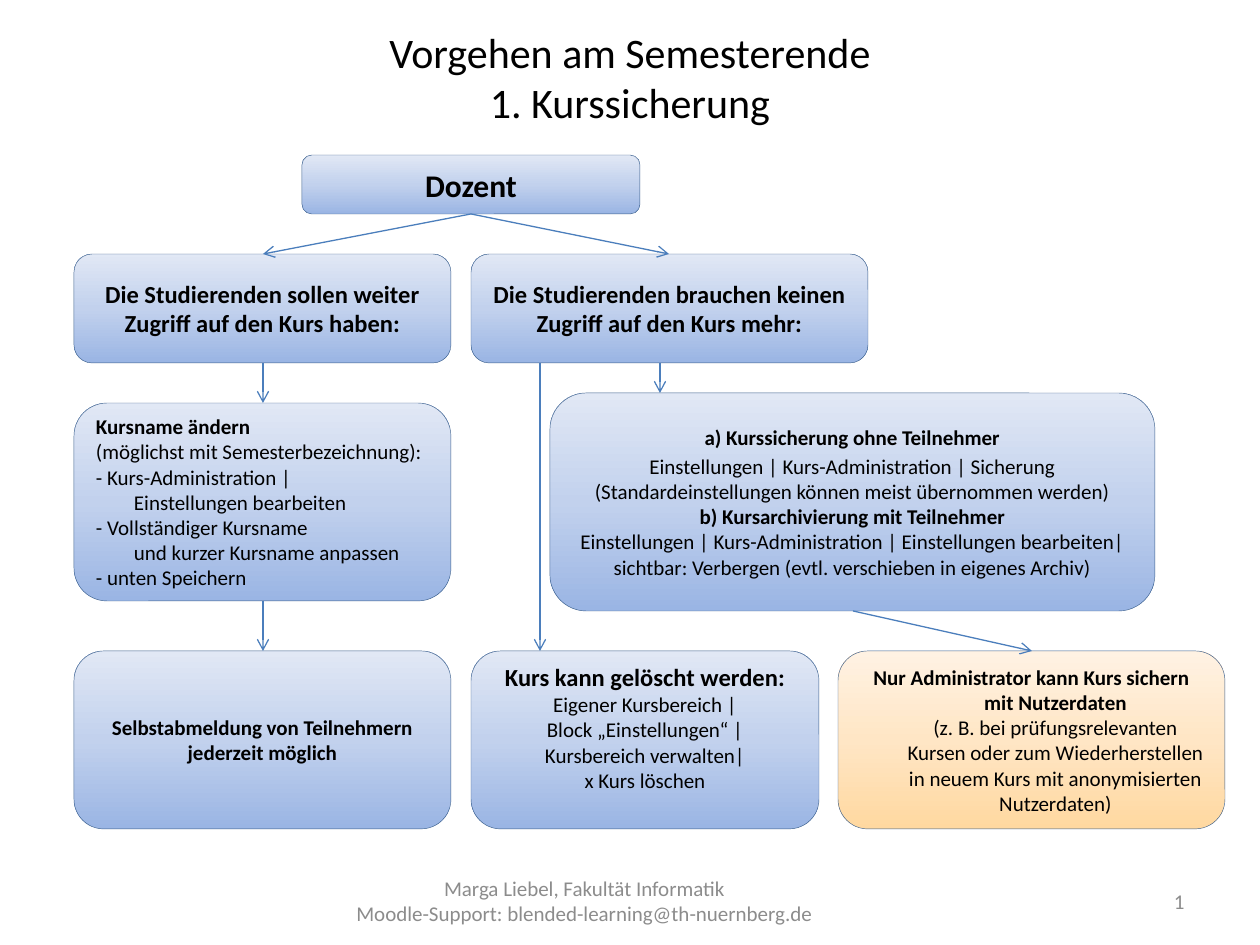
from copy import deepcopy
from lxml.etree import SubElement
from pptx import Presentation
from pptx.dml.color import RGBColor
from pptx.enum.shapes import MSO_CONNECTOR as Connector, MSO_SHAPE as Preset
from pptx.enum.text import MSO_ANCHOR as Anchor, MSO_AUTO_SIZE as AutoSize, PP_ALIGN as Align
from pptx.oxml.ns import qn
from pptx.util import Emu, Pt

hex_color = RGBColor.from_string


def px(value):
    return Emu(round(value * 914400 / 126))


def write(frame, lines, align, color="000000"):
    frame_format = {"word_wrap": True, "auto_size": AutoSize.NONE,
                    "vertical_anchor": Anchor.MIDDLE}
    for key, value in frame_format.items():
        setattr(frame, key, value)
    for index, (text, size, bold, left, first, before) in enumerate(lines):
        line = frame.add_paragraph() if index else frame.paragraphs[0]
        properties = line._p.get_or_add_pPr()
        properties.set("marL", str(px(left)))
        properties.set("indent", str(px(first)))
        SubElement(properties, qn("a:buNone"))
        line.alignment = align
        line.space_before = Pt(before)
        run = line.add_run()
        run.text = text
        font_format = {"name": "Calibri", "size": Pt(size), "bold": bold}
        for key, value in font_format.items():
            setattr(run.font, key, value)
        run.font.color.rgb = hex_color(color)


deck = Presentation()
deck.slide_width, deck.slide_height = px(1260), px(945)
slide = deck.slides.add_slide(deck.slide_layouts[1])
title, admin_note = slide.placeholders

title_place = {"left": 63, "top": 38, "width": 1134, "height": 77}
for key, value in title_place.items():
    setattr(title, key, px(value))
write(title.text_frame, [("Vorgehen am Semesterende", 24, False, 0, 0, 0),
                         ("1. Kurssicherung", 24, False, 0, 0, 0)], Align.CENTER)

blue = ["9AB5E4", "C2D1ED", "E1E8F5"]
orange = ["FFD8A0", "FFE6C5", "FFF2E3"]

steps = [
    ((302, 155, 338, 59), blue, Align.CENTER, [("Dozent", 18, True, 0, 0, 0)]),
    ((74, 254, 377, 109), blue, Align.CENTER, [
        ("Die Studierenden sollen weiter", 14, True, 0, 0, 0),
        ("Zugriff auf den Kurs haben:", 14, True, 0, 0, 0)]),
    ((471, 254, 397, 109), blue, Align.CENTER, [
        ("Die Studierenden brauchen keinen Zugriff auf den Kurs mehr:", 14, True, 0, 0, 0)]),
    ((74, 403, 377, 198), blue, Align.LEFT, [
        ("Kursname ändern", 12, True, 0, 0, 0),
        ("(möglichst mit Semesterbezeichnung):", 12, False, 0, 0, 0),
        ("- Kurs-Administration |", 12, False, 0, 0, 0),
        ("Einstellungen bearbeiten", 12, False, 38, 0, 0),
        ("- Vollständiger Kursname", 12, False, 0, 0, 0),
        ("und kurzer Kursname anpassen", 12, False, 38, 0, 0),
        ("- unten Speichern", 12, False, 0, 0, 0)]),
    ((550, 393, 605, 218), blue, Align.CENTER, [
        ("a) Kurssicherung ohne Teilnehmer", 12, True, 0, 0, 0),
        ("Einstellungen | Kurs-Administration | Sicherung", 12, False, 0, 0, 2),
        ("(Standardeinstellungen können meist übernommen werden)", 12, False, 0, 0, 0),
        ("b) Kursarchivierung mit Teilnehmer", 12, True, 0, 0, 0),
        ("Einstellungen | Kurs-Administration | Einstellungen bearbeiten|", 12, False, 0, 0, 0),
        ("sichtbar: Verbergen (evtl. verschieben in eigenes Archiv)", 12, False, 0, 0, 0)]),
    ((74, 651, 377, 178), blue, Align.CENTER, [
        ("Selbstabmeldung von Teilnehmern", 12, True, 0, 0, 0),
        ("jederzeit möglich", 12, True, 0, 0, 0)]),
    ((471, 651, 348, 178), blue, Align.CENTER, [
        ("Kurs kann gelöscht werden:", 14, True, 0, 0, 0),
        ("Eigener Kursbereich |", 12, False, 0, 0, 0),
        ("Block „Einstellungen“ |", 12, False, 0, 0, 0),
        ("Kursbereich verwalten|", 12, False, 0, 0, 0),
        ("x Kurs löschen", 12, False, 0, 0, 0)]),
    ((838, 651, 387, 178), orange, Align.CENTER, [
        ("Nur Administrator kann Kurs sichern mit Nutzerdaten", 12, True, 48, -48, 0),
        ("(z. B. bei prüfungsrelevanten Kursen oder zum Wiederherstellen in neuem Kurs "
         "mit anonymisierten Nutzerdaten)", 12, False, 48, 0, 0)]),
]

for place, shades, align, lines in steps:
    if shades is orange:
        step = admin_note
        for key, value in zip(("left", "top", "width", "height"), place):
            setattr(step, key, px(value))
        outline = SubElement(step._element.spPr, qn("a:prstGeom"), prst="roundRect")
        SubElement(outline, qn("a:avLst"))
    else:
        step = slide.shapes.add_shape(Preset.ROUNDED_RECTANGLE, *map(px, place))
        step.shadow.inherit = False
    step.fill.gradient()
    step.fill.gradient_angle = 90
    stop_list = step._element.spPr.find(qn("a:gradFill")).find(qn("a:gsLst"))
    stop_list.insert(1, deepcopy(stop_list[0]))
    for stop, position, shade in zip(step.fill.gradient_stops, (0, 0.5, 1), shades):
        stop.position = position
        stop.color.rgb = hex_color(shade)
    step.line.color.rgb = hex_color("3A5F8C")
    step.line.width = Pt(0.25)
    write(step.text_frame, lines, align)
    if lines[0][0].startswith("Kurs kann"):
        step.text_frame.margin_bottom = px(31)

flows = [
    (471, 214, 263, 254), (471, 214, 669, 254), (263, 363, 263, 403),
    (263, 601, 263, 651), (540, 363, 540, 651), (660, 363, 660, 393),
    (853, 611, 1032, 651),
]
for ends in flows:
    flow = slide.shapes.add_connector(Connector.STRAIGHT, *map(px, ends))
    flow.line.color.rgb = hex_color("4B7EBC")
    flow.line.width = Pt(0.75)
    SubElement(flow.line._get_or_add_ln(), qn("a:tailEnd"), type="arrow")
    SubElement(flow._element.spPr, qn("a:effectLst"))

footers = [
    ((282, 876, 605, 50), Align.CENTER, [
        "Marga Liebel, Fakultät Informatik",
        "Moodle-Support: blended-learning@th-nuernberg.de"]),
    ((903, 876, 294, 50), Align.RIGHT, ["1"]),
]
for place, align, texts in footers:
    footer = slide.shapes.add_textbox(*map(px, place))
    write(footer.text_frame, [(text, 12, False, 0, 0, 0) for text in texts], align, "8C8C8C")

deck.save("out.pptx")
